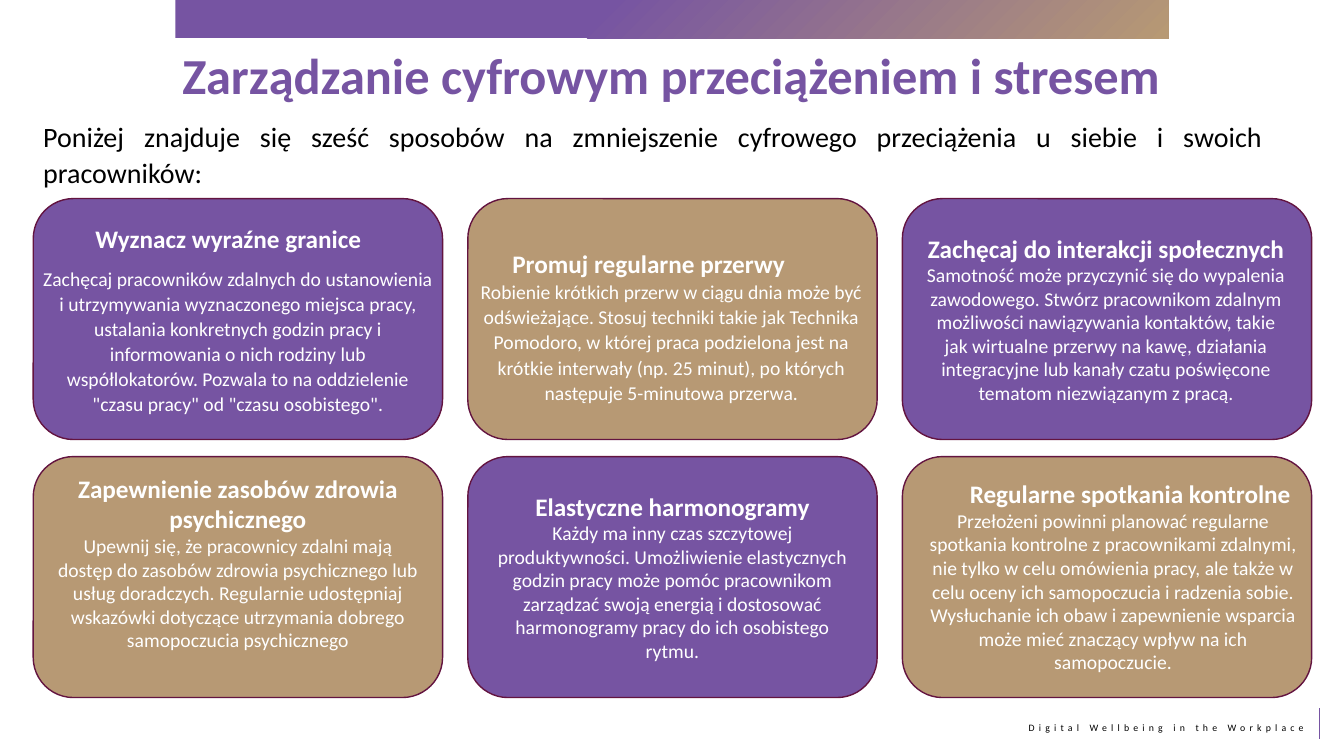
from dataclasses import dataclass

from lxml.etree import SubElement
from pptx import Presentation
from pptx.dml.color import RGBColor
from pptx.enum.shapes import MSO_CONNECTOR, MSO_SHAPE
from pptx.enum.text import MSO_ANCHOR, MSO_AUTO_SIZE, PP_ALIGN
from pptx.oxml.ns import qn
from pptx.util import Inches, Pt

FONT = "Calibri"
PURPLE, TAN, BURGUNDY = "7654A2", "B79974", "631440"
WHITE, BLACK = "FFFFFF", "000000"

# Card grid
LEFT, TOP = 0.33, 1.97
CARD_WIDTH, CARD_HEIGHT = 4.06, 2.39
COLUMN_STEP, ROW_STEP = 4.31, 2.56
COLUMNS = 3


@dataclass
class Card:
    heading: str
    advice: str
    text_area: tuple[float, float, float, float]  # offset from the card, then size
    heading_indent: float = 0
    advice_indent: float = 0
    line_spacing: float = 1.0
    heading_after: float = 0
    advice_after: float = 0


CARDS = [
    Card("Wyznacz wyraźne granice",
         "Zachęcaj pracowników zdalnych do ustanowienia i utrzymywania wyznaczonego "
         "miejsca pracy, ustalania konkretnych godzin pracy i informowania o nich rodziny "
         "lub współlokatorów. Pozwala to na oddzielenie \"czasu pracy\" od \"czasu osobistego\".",
         (-0.49, 0.17, 4.55, 2.04), 0.3, 0.49, 1.07, 8, 8),
    Card("Promuj regularne przerwy",
         "Robienie krótkich przerw w ciągu dnia może być odświeżające. Stosuj techniki takie "
         "jak Technika Pomodoro, w której praca podzielona jest na krótkie interwały "
         "(np. 25 minut), po których następuje 5-minutowa przerwa.",
         (-0.63, 0.42, 4.8, 1.67), 0.05, 0.5, 1.07, 0, 8),
    Card("Zachęcaj do interakcji społecznych",
         "Samotność może przyczynić się do wypalenia zawodowego. Stwórz pracownikom zdalnym "
         "możliwości nawiązywania kontaktów, takie jak wirtualne przerwy na kawę, działania "
         "integracyjne lub kanały czatu poświęcone tematom niezwiązanym z pracą.",
         (0.13, 0.28, 3.78, 1.82)),
    Card("Zapewnienie zasobów zdrowia psychicznego",
         "Upewnij się, że pracownicy zdalni mają dostęp do zasobów zdrowia psychicznego lub "
         "usług doradczych. Regularnie udostępniaj wskazówki dotyczące utrzymania dobrego "
         "samopoczucia psychicznego",
         (0.14, 0.11, 3.78, 1.88)),
    Card("Elastyczne harmonogramy",
         "Każdy ma inny czas szczytowej produktywności. Umożliwienie elastycznych godzin pracy "
         "może pomóc pracownikom zarządzać swoją energią i dostosować harmonogramy pracy do "
         "ich osobistego rytmu.",
         (0.14, 0.28, 3.78, 1.82)),
    Card("Regularne spotkania kontrolne",
         "Przełożeni powinni planować regularne spotkania kontrolne z pracownikami zdalnymi, "
         "nie tylko w celu omówienia pracy, ale także w celu oceny ich samopoczucia i radzenia "
         "sobie. Wysłuchanie ich obaw i zapewnienie wsparcia może mieć znaczący wpływ na ich "
         "samopoczucie.",
         (0.13, 0.16, 3.92, 2.05), 0.34),
]


def rgb(code: str) -> RGBColor:
    return RGBColor.from_string(code)


def write(paragraph, text: str, *, size: float, color: str, bold: bool = False,
          align=PP_ALIGN.CENTER, indent: float = 0, line_spacing: float = 1.0,
          after: float = 0, tracking: float = 0) -> None:
    paragraph.alignment = align
    paragraph.line_spacing = line_spacing
    paragraph.space_before, paragraph.space_after = Pt(0), Pt(after)
    if indent:
        properties = paragraph._p.get_or_add_pPr()
        properties.set("marL", str(Inches(indent)))
        properties.set("indent", "0")
    run = paragraph.add_run()
    run.text = text
    run.font.name, run.font.size, run.font.bold = FONT, Pt(size), bold
    run.font.color.rgb = rgb(color)
    if tracking:
        run._r.get_or_add_rPr().set("spc", str(int(tracking * 100)))


def add_text_frame(slide, left: float, top: float, width: float, height: float,
                   anchor=MSO_ANCHOR.TOP):
    frame = slide.shapes.add_textbox(
        Inches(left), Inches(top), Inches(width), Inches(height)).text_frame
    frame.word_wrap = True
    frame.auto_size = MSO_AUTO_SIZE.SHAPE_TO_FIT_TEXT
    frame.vertical_anchor = anchor
    return frame


def add_header_band(slide) -> None:
    band = slide.shapes.add_shape(
        MSO_SHAPE.RECTANGLE, Inches(1.74), 0, Inches(9.85), Inches(0.38))
    band.shadow.inherit = False
    band.line.fill.background()
    band.fill.gradient()
    for stop, position, color in zip(band.fill.gradient_stops, (0, 0.58), (TAN, PURPLE)):
        stop.position = position
        stop.color.rgb = rgb(color)
    # Radial gradient centred on the lower right corner
    gradient = band._element.spPr.find(qn("a:gradFill"))
    gradient.remove(gradient.find(qn("a:lin")))
    radial = SubElement(gradient, qn("a:path"), path="circle")
    SubElement(radial, qn("a:fillToRect"), l="100000", t="100000")


def add_title(slide) -> None:
    title = slide.shapes.title
    title.left, title.top = Inches(0.93), Inches(0.36)
    title.width, title.height = Inches(11.46), Inches(0.88)
    frame = title.text_frame
    frame.auto_size = MSO_AUTO_SIZE.NONE
    frame.vertical_anchor = MSO_ANCHOR.TOP
    frame.margin_top = Inches(0.08)
    write(frame.paragraphs[0], "Zarządzanie cyfrowym przeciążeniem i stresem",
          size=36, color=PURPLE, bold=True)


def add_card(slide, card: Card, index: int) -> None:
    row, column = divmod(index, COLUMNS)
    left, top = LEFT + column * COLUMN_STEP, TOP + row * ROW_STEP
    panel = slide.shapes.add_shape(
        MSO_SHAPE.ROUNDED_RECTANGLE, Inches(left), Inches(top),
        Inches(CARD_WIDTH), Inches(CARD_HEIGHT))
    panel.shadow.inherit = False
    panel.fill.solid()
    panel.fill.fore_color.rgb = rgb(TAN if index % 2 else PURPLE)
    panel.line.color.rgb = rgb(BURGUNDY)
    panel.line.width = Pt(1)

    dx, dy, width, height = card.text_area
    frame = add_text_frame(slide, left + dx, top + dy, width, height, MSO_ANCHOR.MIDDLE)
    write(frame.paragraphs[0], card.heading, size=18, color=WHITE, bold=True,
          indent=card.heading_indent, line_spacing=card.line_spacing,
          after=card.heading_after)
    write(frame.add_paragraph(), card.advice, size=14, color=WHITE,
          indent=card.advice_indent, line_spacing=card.line_spacing,
          after=card.advice_after)


def add_footer(slide) -> None:
    frame = add_text_frame(slide, 9.68, 7.11, 3.35, 0.22)
    write(frame.paragraphs[0], "Digital Wellbeing in the Workplace",
          size=7, color=BLACK, align=PP_ALIGN.RIGHT, tracking=3)
    rule = slide.shapes.add_connector(
        MSO_CONNECTOR.STRAIGHT, Inches(13.09), Inches(7.33), Inches(13.09), Inches(7.02))
    rule.line.color.rgb = rgb(PURPLE)
    rule.line.width = Pt(0.75)
    SubElement(rule._element.spPr, qn("a:effectLst"))


def main() -> None:
    presentation = Presentation()
    presentation.slide_width, presentation.slide_height = Inches(13.33), Inches(7.5)
    slide = presentation.slides.add_slide(presentation.slide_layouts[5])

    # Frame and title
    add_footer(slide)
    add_header_band(slide)
    add_title(slide)

    # Six ways to reduce overload
    for index, card in enumerate(CARDS):
        add_card(slide, card, index)

    # Introduction
    introduction = add_text_frame(slide, 0.33, 1.11, 12.29, 0.81)
    write(introduction.paragraphs[0],
          "Poniżej znajduje się sześć sposobów na zmniejszenie cyfrowego przeciążenia "
          "u siebie i swoich pracowników:",
          size=20, color=BLACK, align=PP_ALIGN.JUSTIFY, line_spacing=1.07, after=8)

    presentation.save("out.pptx")


if __name__ == "__main__":
    main()
